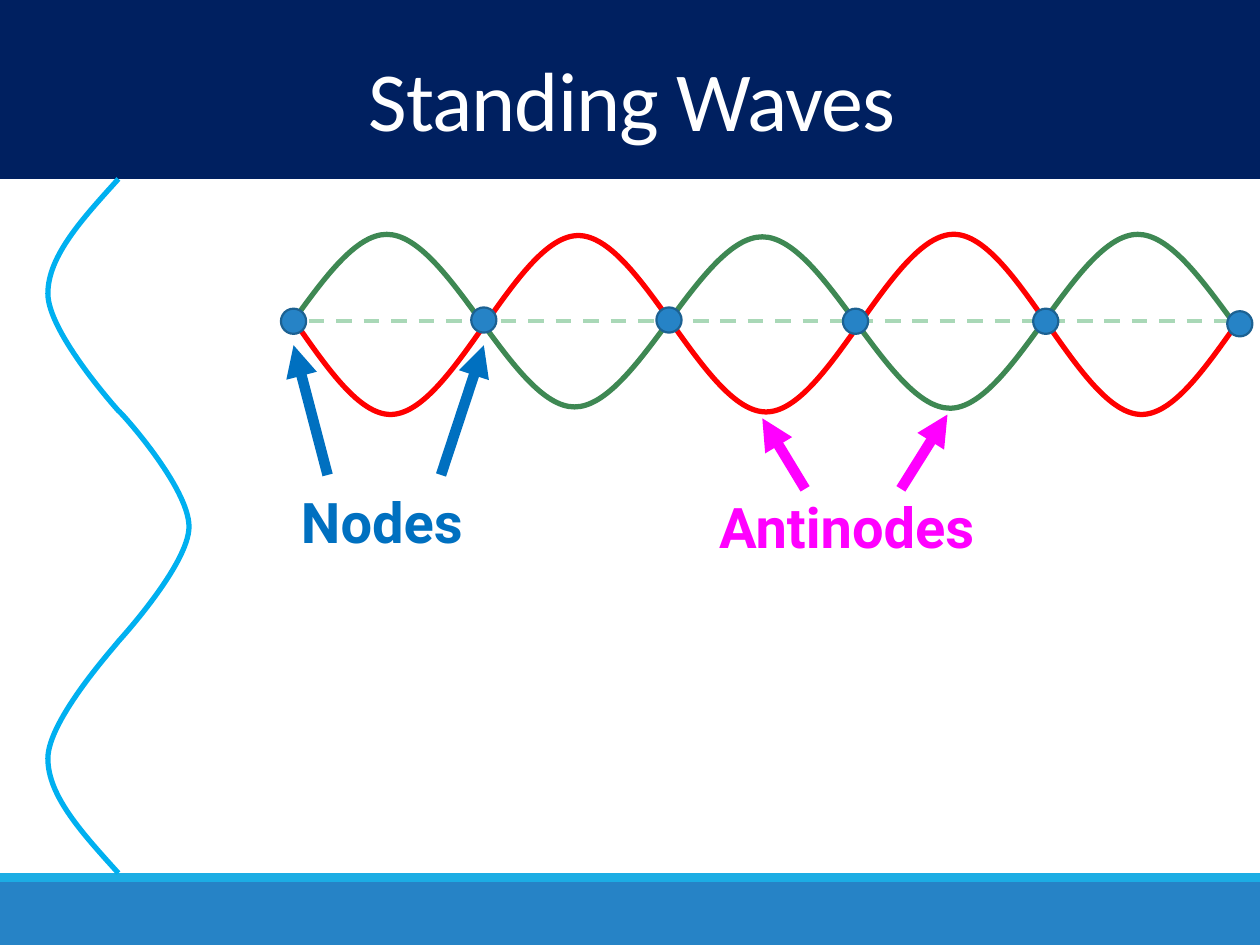
from dataclasses import dataclass

from lxml import etree
from pptx import Presentation
from pptx.dml.color import RGBColor
from pptx.enum.dml import MSO_LINE
from pptx.enum.shapes import MSO_CONNECTOR, MSO_SHAPE
from pptx.enum.text import MSO_ANCHOR, MSO_AUTO_SIZE, PP_ALIGN
from pptx.oxml.ns import qn
from pptx.util import Pt

PX = 9144
RECTANGLE = MSO_SHAPE.RECTANGLE
OVAL = MSO_SHAPE.OVAL
STRAIGHT = MSO_CONNECTOR.STRAIGHT
DASH = MSO_LINE.DASH
CENTER = PP_ALIGN.CENTER
MIDDLE = MSO_ANCHOR.MIDDLE
FIT_TEXT = MSO_AUTO_SIZE.SHAPE_TO_FIT_TEXT
TITLE_ONLY_LAYOUT = 5

Point = tuple[int, int]
Box = tuple[int, int, int, int]


@dataclass
class Wave:
    left: int
    levels: list[int]
    color: str


@dataclass
class Label:
    text: str
    box: Box
    color: str
    arrows: list[tuple[Point, Point]]


HALF_WAVE = 149
NODE_SIZE = 20
GREEN_WAVE = Wave(158, [324, 186, 323, 188, 324, 186, 322], "3E8853")
RED_WAVE = Wave(161, [186, 329, 187, 327, 186, 329, 188], "FF0000")
MASKS = [(131, 170, 99, 175), (986, 168, 99, 175)]
NODES = [(223, 245), (374, 244), (521, 244), (669, 245), (820, 245), (974, 247)]
LABELS = [
    Label("Nodes", (229, 382, 155, 64), "0070C0",
          [((350, 377), (384, 274)), ((260, 377), (233, 274))]),
    Label("Antinodes", (561, 386, 236, 64), "FF00FF",
          [((715, 388), (752, 329)), ((639, 388), (605, 332))]),
]
SIDE_WAVE = [
    (94, 142),
    (66, 173), (38, 203), (38, 233),
    (38, 264), (94, 326), (94, 326),
    (96, 327), (150, 387), (150, 418),
    (150, 448), (94, 509), (94, 509),
    (93, 511), (38, 571), (38, 602),
    (38, 632), (66, 662), (94, 693),
]


def rgb(color: str) -> RGBColor:
    return RGBColor.from_string(color)


def emu(lengths) -> list[int]:
    return [length * PX for length in lengths]


def set_line(line, color: str, width: float) -> None:
    line.color.rgb = rgb(color)
    line.width = Pt(width)


def add_shape(shapes, kind, box: Box, fill: str, outline: str | None = None):
    shape = shapes.add_shape(kind, *emu(box))
    shape.shadow.inherit = False
    shape.fill.solid()
    shape.fill.fore_color.rgb = rgb(fill)
    if outline:
        set_line(shape.line, outline, 1.25)
    else:
        shape.line.fill.background()
    return shape


def add_line(shapes, start: Point, end: Point, color: str, width: float,
             dash=None, arrow: bool = False) -> None:
    line = shapes.add_connector(STRAIGHT, *emu(start + end))
    set_line(line.line, color, width)
    if dash:
        line.line.dash_style = dash
    properties = line._element.spPr
    if arrow:
        etree.SubElement(properties.find(qn("a:ln")), qn("a:tailEnd"), type="triangle")
    etree.SubElement(properties, qn("a:effectLst"))


def add_curve(shapes, points: list[Point], color: str) -> None:
    builder = shapes.build_freeform(*points[0], scale=PX)
    builder.add_line_segments(points[1:], close=False)
    curve = builder.convert_to_shape()
    outline = next(curve._element.iter(qn("a:path")))
    segments = outline.findall(qn("a:lnTo"))
    for first in range(0, len(segments), 3):
        bezier = etree.SubElement(outline, qn("a:cubicBezTo"))
        for segment in segments[first:first + 3]:
            bezier.append(segment[0])
            outline.remove(segment)
    curve.shadow.inherit = False
    curve.fill.background()
    set_line(curve.line, color, 3)


def add_wave(shapes, wave: Wave) -> None:
    handle = HALF_WAVE // 3
    points = [(wave.left, wave.levels[0])]
    for level in wave.levels[1:]:
        x, y = points[-1]
        end = x + HALF_WAVE
        points += [(x + handle, y), (end - handle, level), (end, level)]
    add_curve(shapes, points, wave.color)


def write_text(frame, text: str, *, size: int, font: str, color: str,
               bold: bool = False, align=None, line_spacing: float | None = None,
               tracking: int | None = None) -> None:
    para = frame.paragraphs[0]
    para.alignment = align
    para.line_spacing = line_spacing
    span = para.add_run()
    span.text = text
    span.font.size = Pt(size)
    span.font.name = font
    span.font.bold = bold
    span.font.color.rgb = rgb(color)
    if tracking is not None:
        span.font._element.set("spc", str(tracking))


def add_title(page) -> None:
    title = page.shapes.title
    title.left, title.top, title.width, title.height = emu((3, 42, 997, 84))
    title.text_frame.vertical_anchor = MIDDLE
    write_text(title.text_frame, "Standing Waves", size=48, font="Calibri",
               color="FFFFFF", align=CENTER, line_spacing=0.85, tracking=-50)
    page.shapes._spTree.append(title._element)


def add_label(shapes, label: Label) -> None:
    group = shapes.add_group_shape()
    box = group.shapes.add_textbox(*emu(label.box))
    box.text_frame.word_wrap = False
    box.text_frame.auto_size = FIT_TEXT
    write_text(box.text_frame, label.text, size=32, font="Roboto",
               color=label.color, bold=True)
    for start, end in label.arrows:
        add_line(group.shapes, start, end, label.color, 6, arrow=True)


def main() -> None:
    deck = Presentation()
    deck.slide_width, deck.slide_height = emu((1000, 750))
    page = deck.slides.add_slide(deck.slide_layouts[TITLE_ONLY_LAYOUT])
    shapes = page.shapes

    add_shape(shapes, RECTANGLE, (0, 700, 1000, 50), "2683C6")
    add_shape(shapes, RECTANGLE, (0, 693, 1000, 7), "1CADE4")
    add_shape(shapes, RECTANGLE, (0, 0, 1000, 142), "002060")
    add_title(page)

    add_wave(shapes, GREEN_WAVE)
    add_line(shapes, (158, 255), (1053, 255), "A9D8B7", 2.25, dash=DASH)
    add_wave(shapes, RED_WAVE)
    for mask in MASKS:
        add_shape(shapes, RECTANGLE, mask, "FFFFFF", "FFFFFF")
    for left, top in NODES:
        add_shape(shapes, OVAL, (left, top, NODE_SIZE, NODE_SIZE), "2683C6", "1C6192")
    for label in LABELS:
        add_label(shapes, label)
    add_curve(shapes, SIDE_WAVE, "00B0F0")

    deck.save("out.pptx")


if __name__ == "__main__":
    main()
